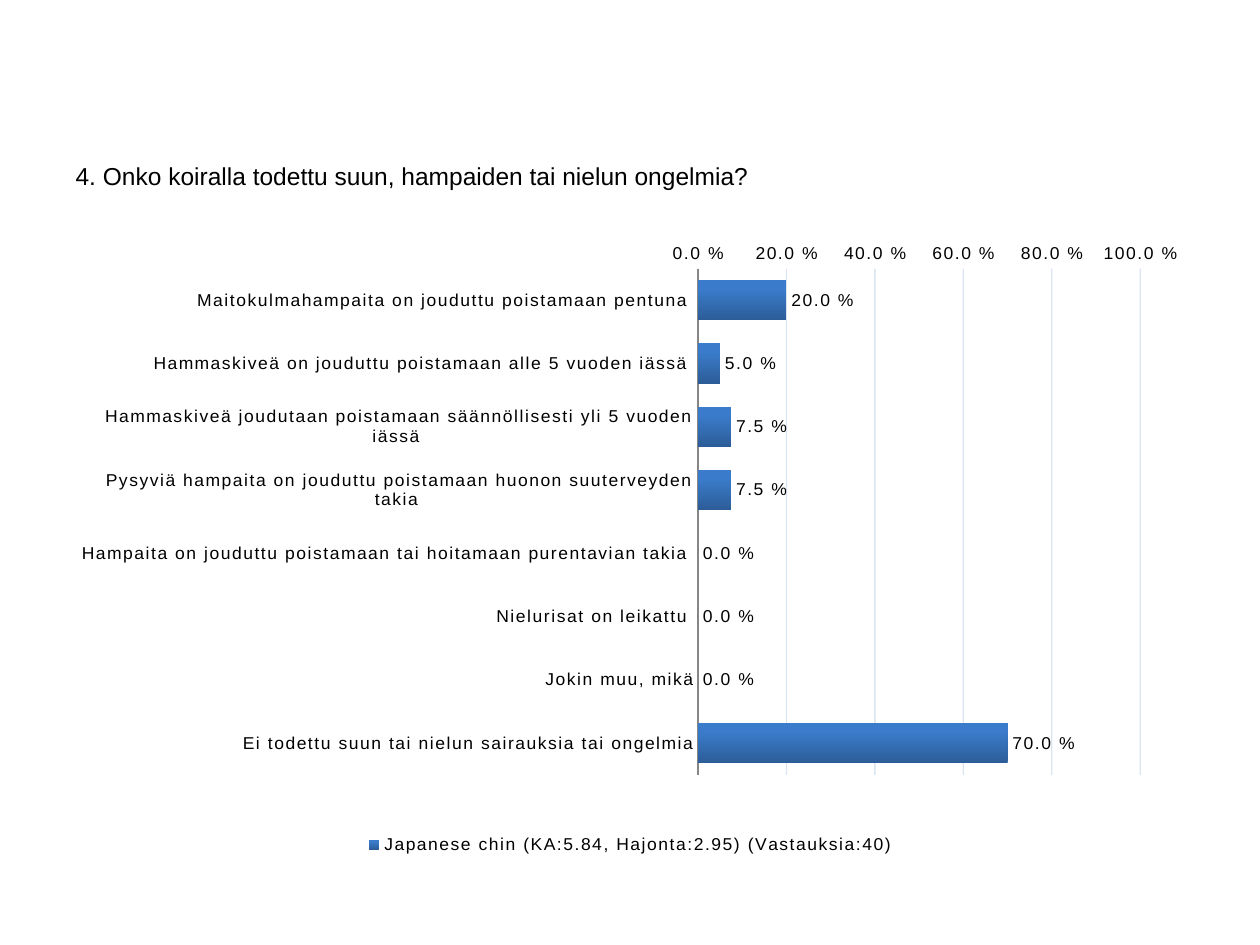
from lxml.etree import SubElement
from pptx import Presentation
from pptx.chart.data import CategoryChartData
from pptx.dml.color import RGBColor
from pptx.enum.chart import (XL_AXIS_CROSSES, XL_CHART_TYPE, XL_LABEL_POSITION,
                             XL_LEGEND_POSITION, XL_TICK_MARK)
from pptx.enum.text import MSO_ANCHOR, PP_ALIGN
from pptx.oxml.ns import qn
from pptx.util import Inches, Pt

COLORS = {"text": "000000", "grid": "4F81BD", "axis": "868686",
          "dark": "2C5D98", "light": "3A7CCB"}
FORMAT = "0.0\\ %"
ANSWERS = [
    ("Maitokulmahampaita on jouduttu poistamaan pentuna ", 0.2),
    ("Hammaskiveä on jouduttu poistamaan alle 5 vuoden iässä ", 0.05),
    ("Hammaskiveä joudutaan poistamaan säännöllisesti yli 5 vuoden iässä ", 0.075),
    ("Pysyviä hampaita on jouduttu poistamaan huonon suuterveyden takia ", 0.075),
    ("Hampaita on jouduttu poistamaan tai hoitamaan purentavian takia ", 0),
    ("Nielurisat on leikattu ", 0),
    ("Jokin muu, mikä", 0),
    ("Ei todettu suun tai nielun sairauksia tai ongelmia", 0.7),
]


def color(name):
    return RGBColor.from_string(COLORS[name])


def style(font, size):
    font.name = "Arial"
    font.size = Pt(size)
    font.bold = False
    font.color.rgb = color("text")


deck = Presentation()
deck.slide_width, deck.slide_height = Inches(10), Inches(7.5)
slide = deck.slides.add_slide(deck.slide_layouts[5])

# Question
title = slide.shapes.title
title.left, title.top = Inches(0.5), Inches(1.23)
title.width, title.height = Inches(9), Inches(0.59)
frame = title.text_frame
frame.text = "4. Onko koiralla todettu suun, hampaiden tai nielun ongelmia?"
frame.vertical_anchor = MSO_ANCHOR.TOP
line = frame.paragraphs[0]
line.alignment = PP_ALIGN.LEFT
line.space_before = Pt(2)
style(line.runs[0].font, 14)

# Answers
data = CategoryChartData(number_format=FORMAT)
data.categories = [name for name, share in ANSWERS]
data.add_series("Japanese chin (KA:5.84, Hajonta:2.95) (Vastauksia:40)",
                [share for name, share in ANSWERS])
chart = slide.shapes.add_chart(
    XL_CHART_TYPE.BAR_CLUSTERED, Inches(0.5), Inches(1.94),
    Inches(9), Inches(4.88), data).chart
chart.has_title = False
style(chart.font, 10)

# Bars
plot = chart.plots[0]
plot.gap_width = 58
plot.vary_by_categories = False
fill = plot.series[0].format.fill
fill.gradient()
fill.gradient_angle = 90
for stop, name, place in zip(fill.gradient_stops, ("dark", "light"), (0, 0.8)):
    stop.color.rgb = color(name)
    stop.position = place

labels = plot.series[0].data_labels
labels.show_value = True
labels.number_format = FORMAT
labels.number_format_is_linked = False
labels.position = XL_LABEL_POSITION.OUTSIDE_END
style(labels.font, 10)

# Axes
cats, vals = chart.category_axis, chart.value_axis
for axis in (cats, vals):
    axis.major_tick_mark = axis.minor_tick_mark = XL_TICK_MARK.NONE
    style(axis.tick_labels.font, 10)
cats.reverse_order = True
cats.crosses = XL_AXIS_CROSSES.MAXIMUM
cats.format.line.color.rgb = color("axis")
cats.format.line.width = Pt(0.75)

vals.minimum_scale, vals.maximum_scale, vals.major_unit = 0, 1, 0.2
vals.tick_labels.number_format = FORMAT
vals.tick_labels.number_format_is_linked = False
vals.format.line.fill.background()
grid = vals.major_gridlines.format.line
grid.color.rgb = color("grid")
grid.width = Pt(0.75)
for tint in chart.element.iterfind(".//" + qn("c:majorGridlines") + "//" + qn("a:srgbClr")):
    SubElement(tint, qn("a:alpha"), val="20000")

# Legend
chart.has_legend = True
chart.legend.position = XL_LEGEND_POSITION.BOTTOM
chart.legend.include_in_layout = False
style(chart.legend.font, 10)

# Letter spacing of one point
for props in chart.element.iter(qn("a:defRPr")):
    props.set("spc", "100")

# Plot area as shares of the chart
area = chart.element.find(".//" + qn("c:plotArea"))
layout = area.find(qn("c:layout"))
if layout is None:
    layout = SubElement(area, qn("c:layout"))
    area.insert(0, layout)
manual = SubElement(layout, qn("c:manualLayout"))
for tag, value in (("layoutTarget", "inner"), ("xMode", "edge"), ("yMode", "edge"),
                   ("x", "0.56"), ("y", "0.02"), ("w", "0.39"), ("h", "0.84")):
    SubElement(manual, qn("c:" + tag), val=value)

deck.save("out.pptx")
